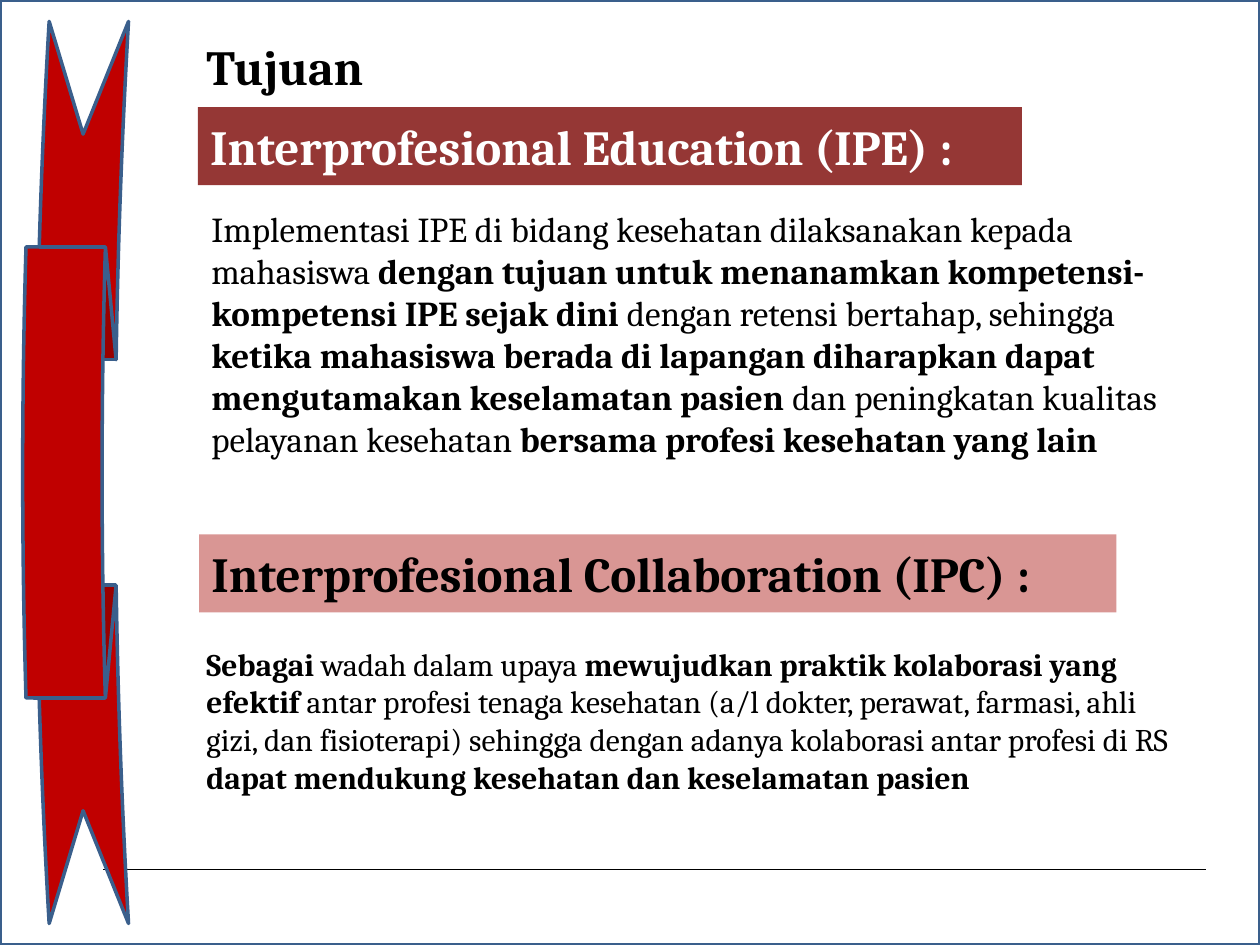
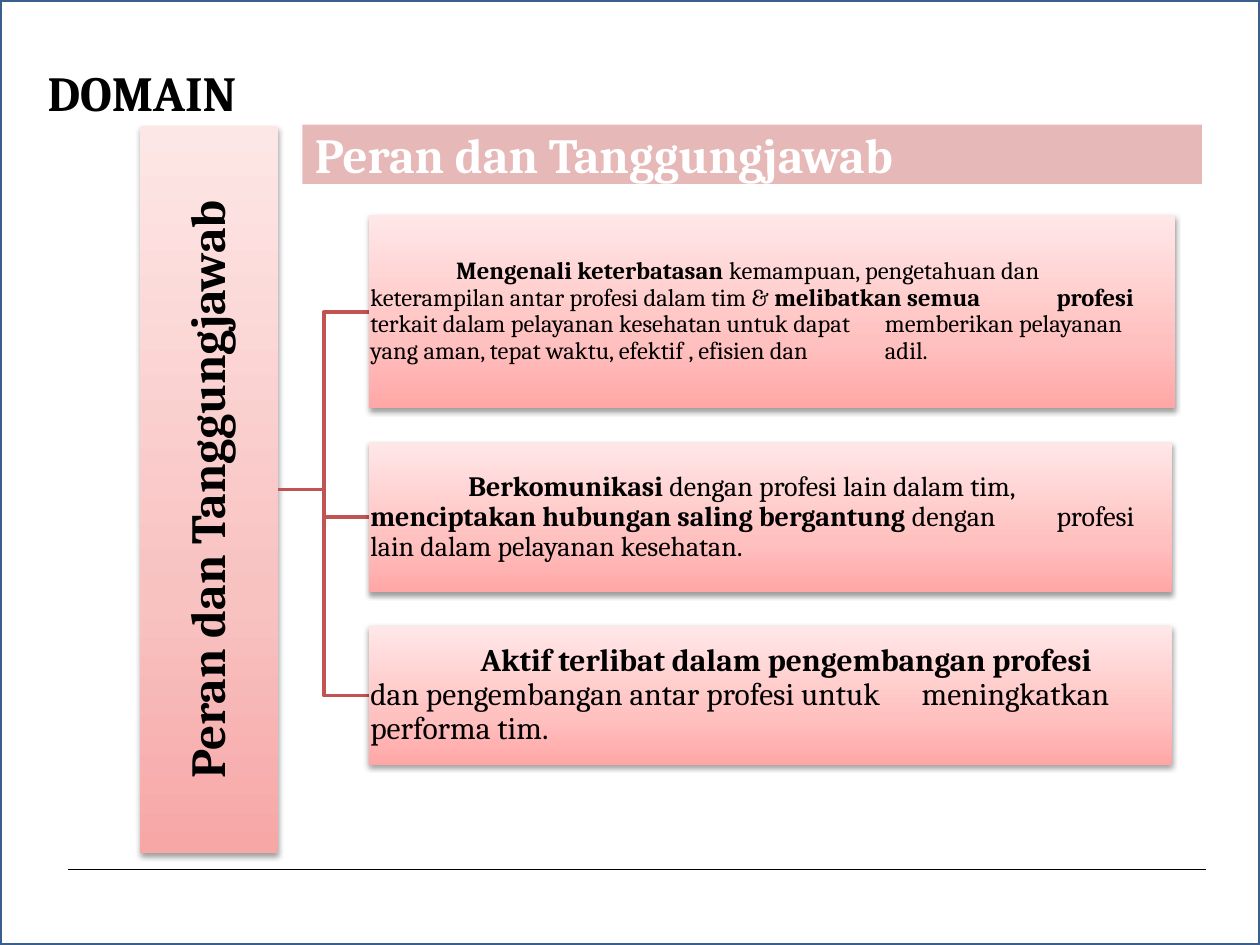
from lxml.etree import SubElement
from pptx import Presentation
from pptx.dml.color import RGBColor
from pptx.enum.shapes import MSO_CONNECTOR, MSO_SHAPE
from pptx.enum.text import MSO_ANCHOR, PP_ALIGN
from pptx.oxml import parse_xml
from pptx.oxml.ns import nsdecls, qn
from pptx.util import Inches, Pt

# The slide is a grid of square cells; all places are in columns and rows.
COLUMNS, ROWS = 100, 75
CELL = Inches(0.1)
RULE_ROW, RULE_END = 69, 95.7

FONT = "Cambria"
HEADING_SIZE = 28
TAB_PER_POINT = 44450  # default tab width grows with the text size

BLACK = RGBColor(0x00, 0x00, 0x00)
WHITE = RGBColor(0xFF, 0xFF, 0xFF)
FRAME_BLUE = RGBColor(0x3A, 0x5F, 0x8C)
RIBBON_RED = RGBColor(0xC0, 0x00, 0x00)
DARK_RED = RGBColor(0x95, 0x37, 0x35)
ROSE = RGBColor(0xD9, 0x96, 0x94)
PALE_ROSE = RGBColor(0xE6, 0xB9, 0xB8)
BRANCH_RED = RGBColor(0xC1, 0x54, 0x52)

# Gradient colours from bottom to top
PILLAR_SHADES = [RGBColor(0xF6, 0xA7, 0xA6), RGBColor(0xF8, 0xC2, 0xC1), RGBColor(0xFD, 0xE7, 0xE6)]
CARD_SHADES = [RGBColor(0xFF, 0xA7, 0xA6), RGBColor(0xFF, 0xC1, 0xC0), RGBColor(0xFF, 0xE7, 0xE7)]
SHADE_STOPS = [0, 35, 100]

# Wording; ** switches bold on and off
IPE_TEXT = (
    "Implementasi IPE di bidang kesehatan dilaksanakan kepada mahasiswa "
    "**dengan tujuan untuk menanamkan kompetensi-kompetensi IPE sejak dini **"
    "dengan retensi bertahap, sehingga "
    "**ketika mahasiswa berada di lapangan diharapkan dapat mengutamakan keselamatan pasien **"
    "dan peningkatan kualitas pelayanan kesehatan **bersama profesi kesehatan yang lain**")
IPC_TEXT = (
    "**Sebagai **wadah dalam upaya **mewujudkan praktik kolaborasi yang efektif **"
    "antar profesi tenaga kesehatan (a/l dokter, perawat, farmasi, ahli gizi, dan fisioterapi) "
    "sehingga dengan adanya kolaborasi antar profesi di RS "
    "**dapat mendukung kesehatan dan keselamatan pasien**")
# Each duty: width, height, text size, wording
DUTIES = [
    (64, 15.3, 14,
     "**\tMengenali keterbatasan** kemampuan, pengetahuan dan \tketerampilan antar profesi "
     "dalam tim & **melibatkan semua \tprofesi **terkait dalam pelayanan kesehatan untuk dapat "
     "\tmemberikan pelayanan yang aman, tepat waktu, efektif , efisien dan \tadil."),
    (63.7, 11.9, 16,
     "**\tBerkomunikasi **dengan profesi lain dalam tim, \t**menciptakan hubungan saling "
     "bergantung **dengan \tprofesi lain dalam pelayanan kesehatan."),
    (63.7, 11, 18,
     "**\tAktif terlibat dalam pengembangan profesi \t**dan pengembangan antar profesi untuk "
     "\tmeningkatkan performa tim."),
]


def cells(*counts):
    return [round(count * CELL) for count in counts]


def write(shape, text, size=HEADING_SIZE, color=BLACK, align=PP_ALIGN.LEFT,
          spacing=None, margin=None, tab=None):
    """Fill a shape with one paragraph whose ** marks switch bold."""
    frame = shape.text_frame
    frame.word_wrap = True
    frame.vertical_anchor = MSO_ANCHOR.MIDDLE
    if margin is not None:
        frame.margin_left = frame.margin_right = Inches(margin)
        frame.margin_top = frame.margin_bottom = Inches(margin)
    para = frame.paragraphs[0]
    para.alignment = align
    if spacing:
        para.line_spacing = spacing
    if tab:
        para._p.get_or_add_pPr().set("defTabSz", str(tab))
    for index, part in enumerate(text.split("**")):
        if part:
            span = para.add_run()
            span.text = part
            span.font.name = FONT
            span.font.size = Pt(size)
            span.font.bold = index % 2 == 1
            span.font.color.rgb = color


def add_text(page, place, text, **style):
    write(page.shapes.add_textbox(*cells(*place)), text, **style)


def add_block(page, place, fill=None, line=None, kind=MSO_SHAPE.RECTANGLE):
    block = page.shapes.add_shape(kind, *cells(*place))
    block.shadow.inherit = False
    if fill is not None:
        block.fill.solid()
        block.fill.fore_color.rgb = fill
    if line is None:
        block.line.fill.background()
    else:
        block.line.color.rgb = line
        block.line.width = Pt(2)
    return block


def add_banner(page, place, text, fill, color):
    write(add_block(page, place, fill), f"**{text}**", color=color)


def add_shaded_block(page, place, shades):
    """A block with an upward gradient and a soft shadow below."""
    block = add_block(page, place)
    stops = "".join(f'<a:gs pos="{stop * 1000}"><a:srgbClr val="{shade}"/></a:gs>'
                    for stop, shade in zip(SHADE_STOPS, shades))
    gradient = parse_xml(f'<a:gradFill {nsdecls("a")} rotWithShape="1"><a:gsLst>{stops}</a:gsLst>'
                         '<a:lin ang="16200000" scaled="0"/></a:gradFill>')
    properties = block._element.spPr
    properties.find(qn("a:prstGeom")).addnext(gradient)
    shadow = parse_xml(f'<a:outerShdw {nsdecls("a")} blurRad="40000" dist="20000" dir="5400000" '
                       'rotWithShape="0"><a:srgbClr val="000000"><a:alpha val="38000"/>'
                       '</a:srgbClr></a:outerShdw>')
    properties.find(qn("a:effectLst")).append(shadow)
    return block


def add_branch(page, start, end):
    """An elbow from the pillar to a card, bending halfway."""
    bend = (start[0] + end[0]) / 2
    points = [cells(*point) for point in (start, (bend, start[1]), (bend, end[1]), end)]
    builder = page.shapes.build_freeform(*points[0])
    builder.add_line_segments(points[1:], close=False)
    branch = builder.convert_to_shape()
    branch.shadow.inherit = False
    branch.fill.background()
    branch.line.color.rgb = BRANCH_RED
    branch.line.width = Pt(2)


def add_page(deck, title, title_place, rule_start):
    """Frame, title and footer rule shared by the slides."""
    page = deck.slides.add_slide(deck.slide_layouts[6])
    add_block(page, (0, 0, COLUMNS, ROWS), WHITE, FRAME_BLUE)
    add_text(page, title_place, f"**{title}**")
    rule = page.shapes.add_connector(
        MSO_CONNECTOR.STRAIGHT, *cells(rule_start, RULE_ROW, RULE_END, RULE_ROW))
    rule.line.color.rgb = BLACK
    rule.line.width = Pt(0.75)
    SubElement(rule._element.spPr, qn("a:effectLst"))
    return page


def build_goals(deck):
    page = add_page(deck, "Tujuan", (15.4, 1.3, 58.7, 7.9), rule_start=8.2)
    ribbon = add_block(page, (-29.8, 33.3, 71.6, 8.4), RIBBON_RED, FRAME_BLUE,
                       kind=MSO_SHAPE.CURVED_DOWN_RIBBON)
    ribbon.rotation = 90
    add_banner(page, (15.7, 8.5, 65.4, 6.2), "Interprofesional Education (IPE) :", DARK_RED, WHITE)
    add_text(page, (15.8, 16.2, 80.3, 20.5), IPE_TEXT, size=20)
    add_banner(page, (15.8, 42.4, 72.8, 6.2), "Interprofesional Collaboration (IPC) :", ROSE, BLACK)
    add_text(page, (15.4, 46.9, 80.3, 20.5), IPC_TEXT, size=18)


def build_domain(deck):
    page = add_page(deck, "DOMAIN", (2.8, 2.6, 58.7, 9.4), rule_start=5.4)
    topic = "Peran dan Tanggungjawab"
    add_banner(page, (24, 9.9, 71.4, 4.7), topic, PALE_ROSE, WHITE)

    # Pillar with upward text
    left, top, width, height = 11.1, 10, 11, 57.7
    pillar = add_shaded_block(page, (left, top, width, height), PILLAR_SHADES)
    write(pillar, f"**{topic}**", align=PP_ALIGN.CENTER, spacing=0.9, margin=0.02)
    pillar.text_frame._txBody.bodyPr.set("vert", "vert270")
    trunk = (left + width, top + height / 2)

    # Cards stacked with an equal gap, each joined to the pillar
    card_left, card_top, gap = 29.3, 17.1, 2.7
    for card_width, card_height, size, text in DUTIES:
        add_branch(page, trunk, (card_left, card_top + card_height / 2))
        card = add_shaded_block(page, (card_left, card_top, card_width, card_height), CARD_SHADES)
        write(card, text, size=size, spacing=0.9, margin=0.01, tab=size * TAB_PER_POINT)
        card_top += card_height + gap


def main():
    deck = Presentation()
    deck.slide_width, deck.slide_height = cells(COLUMNS, ROWS)
    build_goals(deck)
    build_domain(deck)
    deck.save("out.pptx")


if __name__ == "__main__":
    main()
